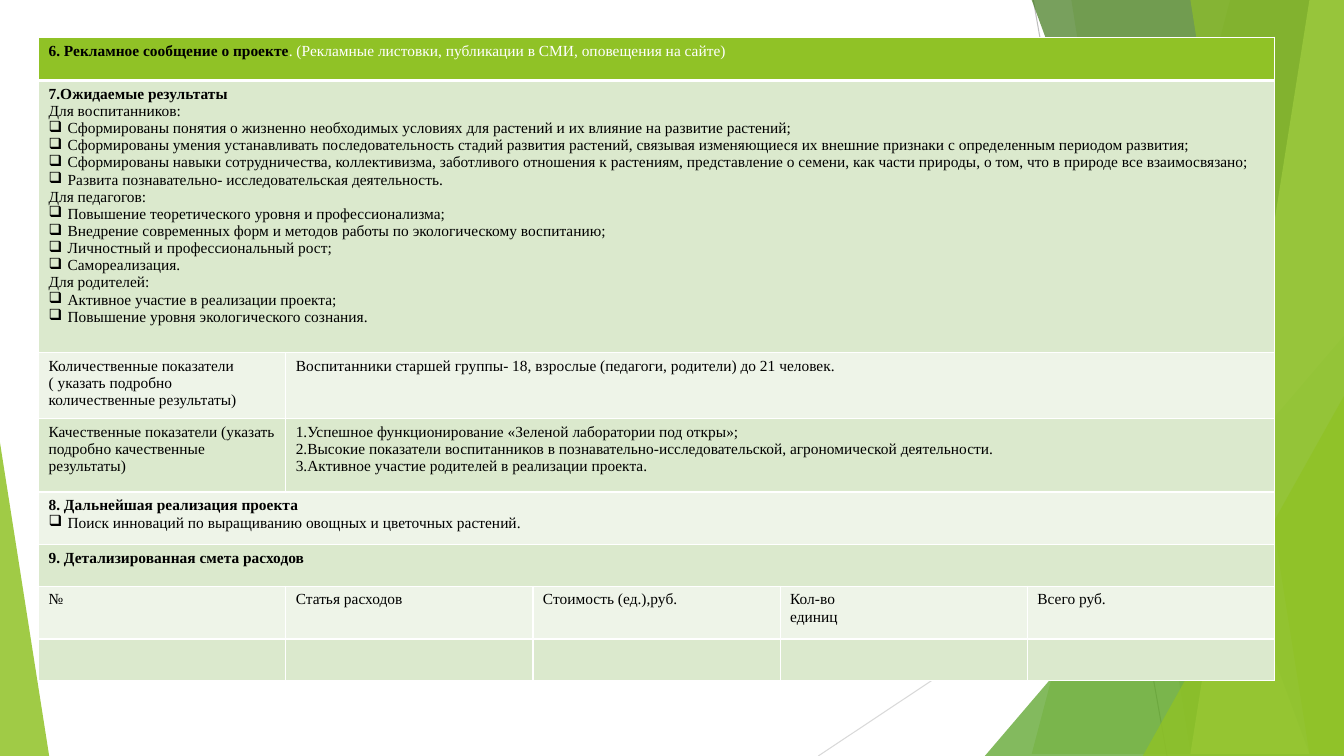
from lxml.etree import SubElement
from pptx import Presentation
from pptx.dml.color import RGBColor
from pptx.enum.shapes import MSO_CONNECTOR, MSO_SHAPE
from pptx.oxml.ns import qn
from pptx.util import Cm, Pt

W, H = 33.87, 19.05
GREEN, BAND_DARK, BAND_LIGHT = "90C226", "DBE9CD", "EEF4E8"


def paint(fill, color, alpha=100):
    """Solid fill with opacity in percent."""
    fill.solid()
    fill.fore_color.rgb = RGBColor.from_string(color)
    if alpha < 100:
        clr = fill._xPr.find(qn("a:solidFill"))[0]
        SubElement(clr, qn("a:alpha"), val=str(alpha * 1000))


def add_run(p, text, color="000000", bold=False):
    r = p.add_run()
    r.text = text
    for name, value in {"name": "Times New Roman", "size": Pt(11), "bold": bold}.items():
        setattr(r.font, name, value)
    paint(r.font.fill, color)


prs = Presentation()
prs.slide_width, prs.slide_height = Cm(W), Cm(H)
slide = prs.slides.add_slide(prs.slide_layouts[6])
shapes = slide.shapes

# Background lines
for x1, y1, x2, y2, color in [
    (26.04, 0, 29.41, H, "BFBFBF"),
    (W, 10.24, 20.62, H, "D9D9D9"),
]:
    line = shapes.add_connector(MSO_CONNECTOR.STRAIGHT, Cm(x1), Cm(y1), Cm(x2), Cm(y2))
    paint(line.line.fill, color)
    line.line.width = Pt(0.75)
    SubElement(line._element.spPr, qn("a:effectLst"))

# Facets: (top x, bottom x) reaches the right edge,
# (left, top, width, height, apex) is a triangle
for geometry, color, alpha in [
    ((31.19, 25.5), GREEN, 30),
    ((26.67, 30.05), GREEN, 20),
    ((24.82, 8.46, 9.05, 10.59, 1), "54A021", 72),
    ((25.93, 32.79), "3F7819", 70),
    ((33.1, 30.28), "C0E474", 70),
    ((30.38, 33.48), GREEN, 65),
    ((28.8, 9.98, 5.07, 9.07, 1), GREEN, 80),
    ((0, 11.15, 1.24, 7.9, 0), GREEN, 85),
]:
    if len(geometry) == 2:
        top_x, bottom_x = geometry
        outline = shapes.build_freeform(top_x, -0.02, scale=Cm(1))
        outline.add_line_segments([(W, -0.02), (W, H), (bottom_x, H)], close=True)
        sp = outline.convert_to_shape()
    else:
        *box, apex = geometry
        sp = shapes.add_shape(MSO_SHAPE.ISOSCELES_TRIANGLE, *map(Cm, box))
        sp.adjustments[0] = apex
    paint(sp.fill, color, alpha)
    sp.line.fill.background()
    sp.shadow.inherit = False

# Row height and cells; "#" starts a bold paragraph, "❑" a bulleted one
rows = [
    (1.09, [["#6. Рекламное сообщение о проекте"]]),
    (6.86, [[
        "#7.Ожидаемые результаты",
        "Для воспитанников:",
        "❑Сформированы понятия о жизненно необходимых условиях для растений и их влияние на развитие растений;",
        "❑Сформированы умения устанавливать последовательность стадий развития растений, связывая изменяющиеся их внешние признаки с определенным периодом развития;",
        "❑Сформированы навыки сотрудничества, коллективизма, заботливого отношения к растениям, представление о семени, как части природы, о том, что в природе все взаимосвязано;",
        "❑Развита познавательно- исследовательская деятельность.",
        "Для педагогов:",
        "❑Повышение теоретического уровня и профессионализма;",
        "❑Внедрение современных форм и методов работы по экологическому воспитанию;",
        "❑Личностный и профессиональный рост;",
        "❑Самореализация.",
        "Для родителей:",
        "❑Активное участие в реализации проекта;",
        "❑Повышение уровня экологического сознания.",
    ]]),
    (1.65, [
        ["Количественные показатели", "( указать подробно количественные результаты)"],
        ["Воспитанники старшей группы- 18, взрослые (педагоги, родители) до 21 человек."],
    ]),
    (1.86, [
        ["Качественные показатели (указать подробно качественные результаты)"],
        [
            "1.Успешное функционирование «Зеленой лаборатории под откры»;",
            "2.Высокие показатели воспитанников в познавательно-исследовательской, агрономической деятельности.",
            "3.Активное участие родителей в реализации проекта.",
        ],
    ]),
    (1.33, [[
        "#8. Дальнейшая реализация проекта",
        "❑Поиск инноваций по выращиванию овощных и цветочных растений.",
    ]]),
    (1.04, [["#9. Детализированная смета расходов"]]),
    (1.33, [["№"], ["Статья расходов"], ["Стоимость (ед.),руб."], ["Кол-во", "единиц"], ["Всего руб."]]),
    (1.04, [[]] * 5),
]
COLS, COL_W = 5, 6.23
table = shapes.add_table(
    len(rows), COLS, Cm(0.97), Cm(0.94), Cm(COLS * COL_W), Cm(sum(h for h, _ in rows))
).table
for col in table.columns:
    col.width = Cm(COL_W)

for i, (height, texts) in enumerate(rows):
    table.rows[i].height = Cm(height)
    color = GREEN if i == 0 else BAND_DARK if i % 2 else BAND_LIGHT
    for j in range(COLS):
        cell = table.cell(i, j)
        tc_pr = cell._tc.get_or_add_tcPr()
        for side in ("L", "R", "T", "B"):
            thick = (i, side) in [(0, "B"), (1, "T")]
            ln = SubElement(tc_pr, qn(f"a:ln{side}"), w=str(Pt(3 if thick else 1)))
            SubElement(SubElement(ln, qn("a:solidFill")), qn("a:srgbClr"), val="FFFFFF")
        paint(cell.fill, color)
    if len(texts) < COLS:
        table.cell(i, len(texts) - 1).merge(table.cell(i, COLS - 1))
    for j, paragraphs in enumerate(texts):
        tf = table.cell(i, j).text_frame
        for k, text in enumerate(paragraphs):
            p = tf.paragraphs[0] if k == 0 else tf.add_paragraph()
            if text.startswith("❑"):
                p_pr = p._p.get_or_add_pPr()
                p_pr.set("marL", str(Cm(0.48)))
                p_pr.set("indent", str(Cm(-0.48)))
                SubElement(p_pr, qn("a:buChar"), char="❑")
            add_run(p, text.lstrip("#❑"), bold=text.startswith("#"))

add_run(
    table.cell(0, 0).text_frame.paragraphs[0],
    ". (Рекламные листовки, публикации в СМИ, оповещения на сайте)",
    "FFFFFF",
)

prs.save("out.pptx")
